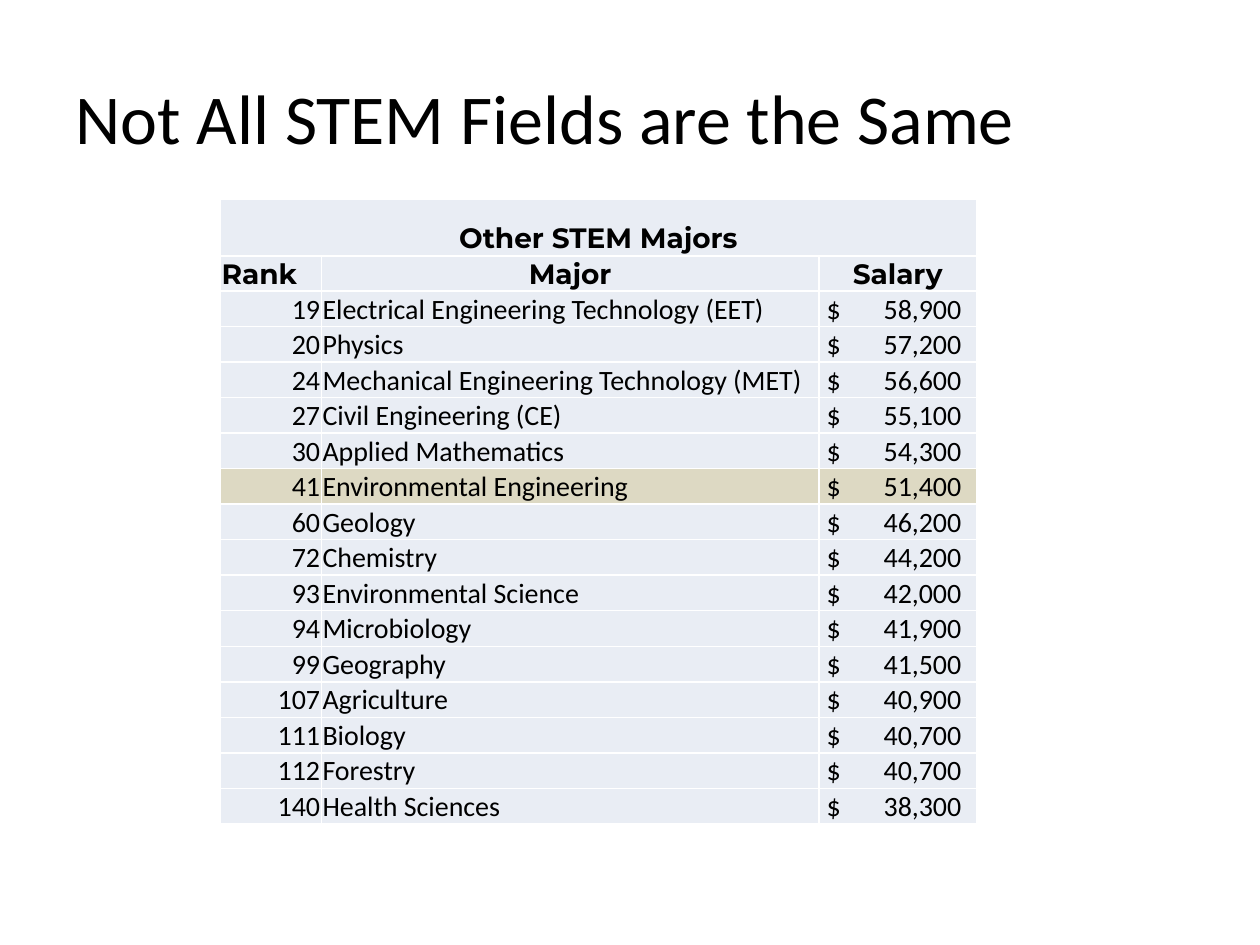
from lxml.etree import SubElement
from pptx import Presentation
from pptx.dml.color import RGBColor
from pptx.enum.text import MSO_ANCHOR as ANCHOR, PP_ALIGN as ALIGN
from pptx.oxml.ns import qn
from pptx.util import Inches, Pt

TITLE = "Not All STEM Fields are the Same"
CAPTION = "Other STEM Majors"
HEADERS = ["Rank", "Major", "Salary"]
MAJORS = [
    (19, "Electrical Engineering Technology (EET)", 58900),
    (20, "Physics", 57200),
    (24, "Mechanical Engineering Technology (MET)", 56600),
    (27, "Civil Engineering (CE)", 55100),
    (30, "Applied Mathematics", 54300),
    (41, "Environmental Engineering", 51400),
    (60, "Geology", 46200),
    (72, "Chemistry", 44200),
    (93, "Environmental Science", 42000),
    (94, "Microbiology", 41900),
    (99, "Geography", 41500),
    (107, "Agriculture", 40900),
    (111, "Biology", 40700),
    (112, "Forestry", 40700),
    (140, "Health Sciences", 38300),
]
HIGHLIGHT = "Environmental Engineering"
COLORS = {"text": "000000", "row": "E9EDF4", "highlight": "DDD9C3", "border": "FFFFFF"}
COL_WIDTHS = [0.8, 3.95, 1.25]
CAPTION_HEIGHT, ROW_HEIGHT = 0.45, 0.28
HEADER_ALIGNS = [ALIGN.LEFT, ALIGN.CENTER, ALIGN.CENTER]
BODY_ALIGNS = [ALIGN.RIGHT, ALIGN.LEFT, ALIGN.LEFT]


def style_font(font, name, size, bold=False):
    """Set the typeface, size, weight and text colour."""
    font.name, font.size, font.bold = name, Pt(size), bold
    font.color.rgb = RGBColor.from_string(COLORS["text"])


def add_borders(cell):
    """Draw a thin border on all four sides of a cell."""
    tcPr = cell._tc.get_or_add_tcPr()
    for side in ("a:lnL", "a:lnR", "a:lnT", "a:lnB"):
        line = SubElement(tcPr, qn(side), w=str(Pt(1)))
        fill = SubElement(line, qn("a:solidFill"))
        SubElement(fill, qn("a:srgbClr"), val=COLORS["border"])


def add_right_tab(p, position):
    """Add a right-aligned tab stop to a paragraph."""
    tabs = SubElement(p._p.get_or_add_pPr(), qn("a:tabLst"))
    SubElement(tabs, qn("a:tab"), pos=str(Inches(position)), algn="r")


def fill_cell(cell, text, align, fill="row", header=False, salary=False):
    """Write and format one table cell."""
    add_borders(cell)
    cell.fill.solid()
    cell.fill.fore_color.rgb = RGBColor.from_string(COLORS[fill])
    cell.margin_left = Inches(0.06 if salary else 0.01)
    cell.margin_right = cell.margin_top = Inches(0.01)
    cell.margin_bottom = 0
    cell.vertical_anchor = ANCHOR.MIDDLE if salary else ANCHOR.BOTTOM
    cell.text_frame.text = text
    p = cell.text_frame.paragraphs[0]
    p.alignment = align
    if salary:
        add_right_tab(p, 1.07)
    for r in p.runs:
        style_font(r.font, "Montserrat" if header else "Calibri", 16, header)


def add_title(s):
    """Place the slide title."""
    title = s.shapes.title
    title.left, title.top = Inches(0.5), Inches(0.3)
    title.width, title.height = Inches(9), Inches(1.25)
    tf = title.text_frame
    tf.text = TITLE
    tf.vertical_anchor = ANCHOR.MIDDLE
    p = tf.paragraphs[0]
    p.alignment = ALIGN.LEFT
    style_font(p.runs[0].font, "Calibri", 40)


def add_salary_table(s):
    """Build the table of majors by rank and salary."""
    heights = [CAPTION_HEIGHT] + [ROW_HEIGHT] * (len(MAJORS) + 1)
    table = s.shapes.add_table(
        len(heights), len(COL_WIDTHS), Inches(1.75), Inches(1.58),
        Inches(sum(COL_WIDTHS)), Inches(sum(heights))).table
    table.first_row = table.horz_banding = False
    for column, width in zip(table.columns, COL_WIDTHS):
        column.width = Inches(width)
    for row, height in zip(table.rows, heights):
        row.height = Inches(height)

    table.cell(0, 0).merge(table.cell(0, len(COL_WIDTHS) - 1))
    for col, text in enumerate([CAPTION, "", ""]):
        fill_cell(table.cell(0, col), text, ALIGN.CENTER, header=True)
    for col, (text, align) in enumerate(zip(HEADERS, HEADER_ALIGNS)):
        fill_cell(table.cell(1, col), text, align, header=True)
    for row, (rank, major, salary) in enumerate(MAJORS, start=2):
        fill = "highlight" if major == HIGHLIGHT else "row"
        texts = [str(rank), major, f"$\t{salary:,}"]
        for col, (text, align) in enumerate(zip(texts, BODY_ALIGNS)):
            fill_cell(table.cell(row, col), text, align, fill, salary=col == 2)


def main():
    """Build and save the slide."""
    prs = Presentation()
    prs.slide_width, prs.slide_height = Inches(10), Inches(7.5)
    s = prs.slides.add_slide(prs.slide_layouts[5])
    add_title(s)
    add_salary_table(s)
    prs.save("out.pptx")


if __name__ == "__main__":
    main()
